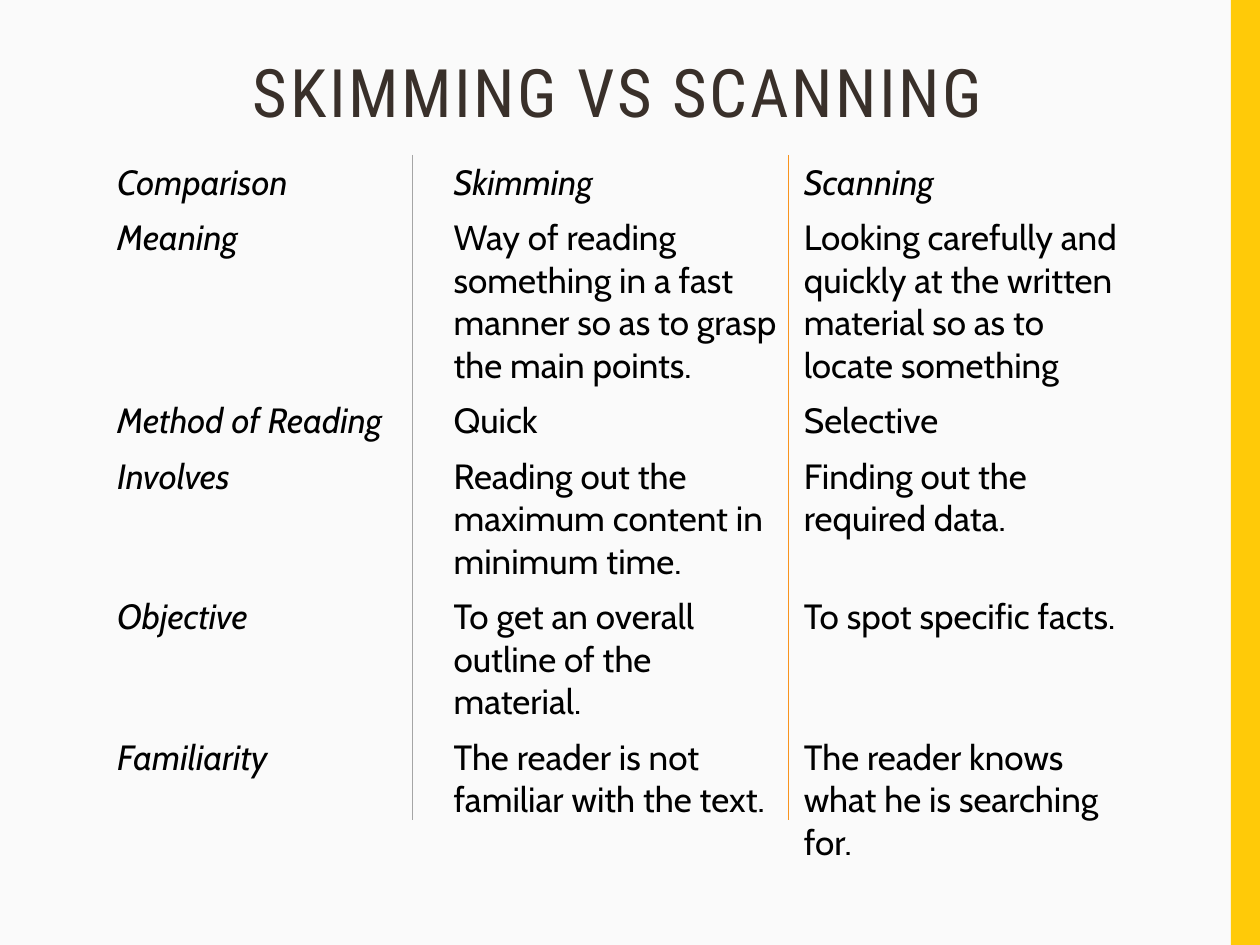
import pptx
import pptx.dml.color
import pptx.enum.shapes
import pptx.enum.text
import pptx.oxml.ns
import pptx.util
from lxml import etree

Inches = pptx.util.Inches
Pt = pptx.util.Pt
RGBColor = pptx.dml.color.RGBColor

BACKGROUND = RGBColor(0xFA, 0xFA, 0xFA)
YELLOW = RGBColor(0xFF, 0xCA, 0x08)
ORANGE = RGBColor(0xF8, 0x93, 0x1D)
GRAY = RGBColor(0xA5, 0xA5, 0xA5)
BROWN = RGBColor(0x39, 0x30, 0x2A)
BLACK = RGBColor(0x00, 0x00, 0x00)

NO_GRID_STYLE = "{2D5ABB26-0587-4C30-8999-92F81FD0307C}"

COLUMN_WIDTHS = [2.67, 2.78, 2.78]
ROW_HEIGHT = 0.41
COMPARISON = [
    ("Comparison", "Skimming", "Scanning"),
    ("Meaning",
     "Way of reading something in a fast manner so as to grasp the main points.",
     "Looking carefully and quickly at the written material so as to locate something"),
    ("Method of Reading", "Quick", "Selective"),
    ("Involves",
     "Reading out the maximum content in minimum time.",
     "Finding out the required data."),
    ("Objective",
     "To get an overall outline of the material.",
     "To spot specific facts."),
    ("Familiarity",
     "The reader is not familiar with the text.",
     "The reader knows what he is searching for."),
]


class SlideBuilder:
    """Holds the style and the current slide."""

    title_font = "Roboto Condensed"
    body_font = "Cabin"
    title_size = 38.2
    body_size = 20

    def __init__(self, slide):
        self.slide = slide
        slide.background.fill.solid()
        slide.background.fill.fore_color.rgb = BACKGROUND

    def add_run(self, paragraph, text, font_name, size, color, italic=False):
        run = paragraph.add_run()
        run.text = text
        run.font.name = font_name
        run.font.size = Pt(size)
        run.font.color.rgb = color
        run.font.italic = italic
        return run

    def add_bar(self, left, top, width, height, color):
        shape = self.slide.shapes.add_shape(
            pptx.enum.shapes.MSO_SHAPE.RECTANGLE,
            Inches(left), Inches(top), Inches(width), Inches(height))
        shape.shadow.inherit = False
        shape.fill.solid()
        shape.fill.fore_color.rgb = color
        shape.line.fill.background()

    def set_title(self, text, left, top, width, height):
        title = self.slide.shapes.title
        title.left, title.top = Inches(left), Inches(top)
        title.width, title.height = Inches(width), Inches(height)
        frame = title.text_frame
        frame.word_wrap = True
        frame.auto_size = pptx.enum.text.MSO_AUTO_SIZE.NONE
        frame.vertical_anchor = pptx.enum.text.MSO_ANCHOR.TOP
        paragraph = frame.paragraphs[0]
        paragraph.alignment = pptx.enum.text.PP_ALIGN.CENTER
        paragraph.line_spacing = 0.9
        run = self.add_run(paragraph, text, self.title_font, self.title_size, BROWN)
        run.font._element.set("spc", "150")

    def add_table(self, rows, left, top, column_widths, row_height):
        frame = self.slide.shapes.add_table(
            len(rows), len(column_widths), Inches(left), Inches(top),
            Inches(sum(column_widths)), Inches(row_height * len(rows)))
        table = frame.table
        table.first_row = False
        table.horz_banding = False
        style = table._tbl.tblPr.find(pptx.oxml.ns.qn("a:tableStyleId"))
        style.text = NO_GRID_STYLE
        for column, width in zip(table.columns, column_widths):
            column.width = Inches(width)
        for row_index, texts in enumerate(rows):
            table.rows[row_index].height = Inches(row_height)
            for column_index, text in enumerate(texts):
                cell = table.cell(row_index, column_index)
                cell.fill.background()
                # Header row and label column are italic
                self.add_run(cell.text_frame.paragraphs[0], text,
                             self.body_font, self.body_size, BLACK,
                             italic=row_index == 0 or column_index == 0)

    def add_vertical_line(self, x, top, bottom, color):
        line = self.slide.shapes.add_connector(
            pptx.enum.shapes.MSO_CONNECTOR.STRAIGHT,
            Inches(x), Inches(top), Inches(x), Inches(bottom))
        line.line.color.rgb = color
        line.line.width = Pt(0.5)
        etree.SubElement(line._element.spPr, pptx.oxml.ns.qn("a:effectLst"))


def main():
    presentation = pptx.Presentation()
    presentation.slide_width = Inches(10)
    presentation.slide_height = Inches(7.5)
    title_only = presentation.slide_layouts[5]
    builder = SlideBuilder(presentation.slides.add_slide(title_only))

    # Side bar and title
    builder.add_bar(9.77, 0, 0.23, 7.5, YELLOW)
    builder.set_title("SKIMMING VS SCANNING", 0.73, 0.42, 8.35, 1.63)

    # Comparison table with column dividers
    builder.add_table(COMPARISON, 0.83, 1.23, COLUMN_WIDTHS, ROW_HEIGHT)
    for x, color in ((3.27, GRAY), (6.26, ORANGE)):
        builder.add_vertical_line(x, 1.23, 6.51, color)

    presentation.save("out.pptx")


if __name__ == "__main__":
    main()
